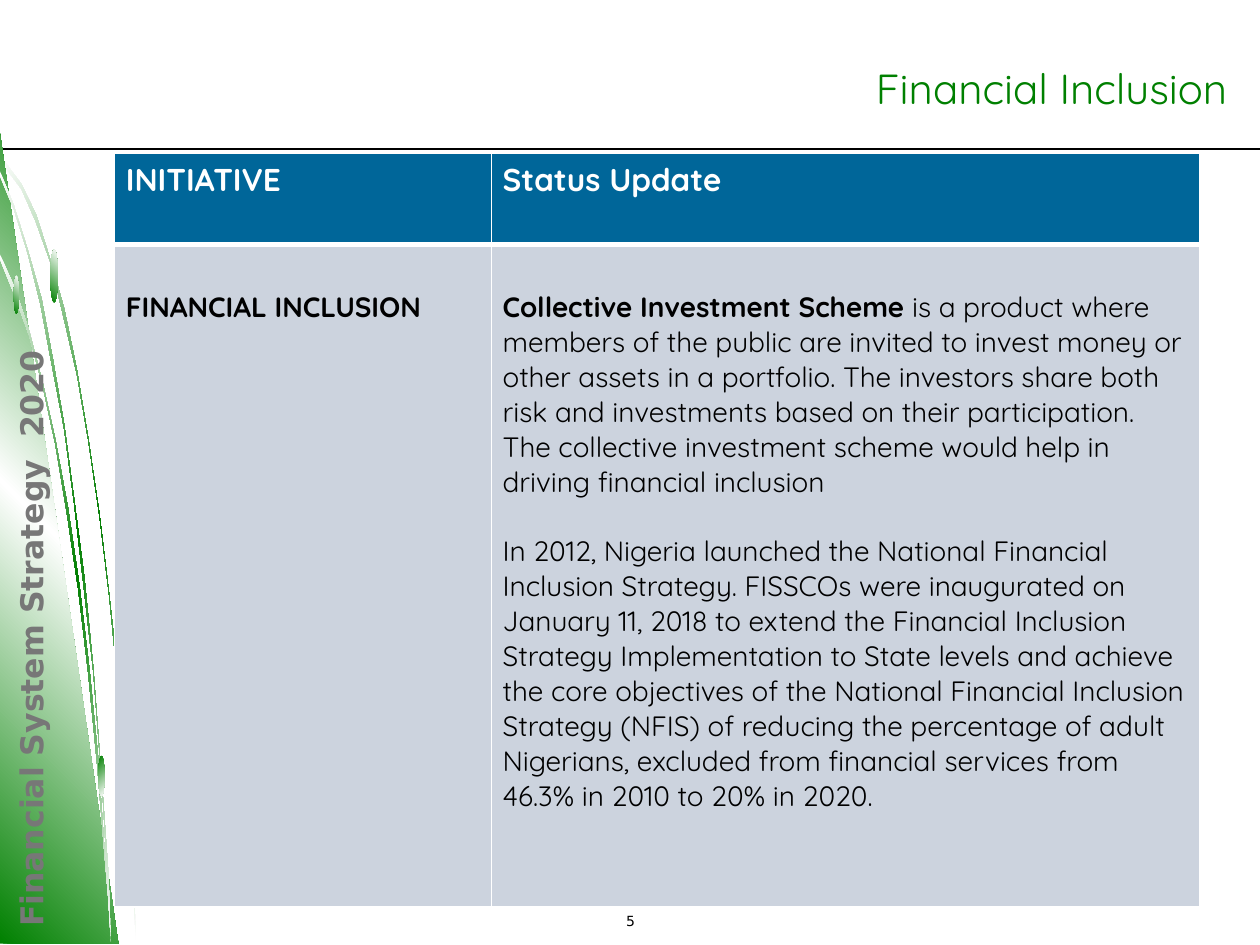
from copy import deepcopy

from lxml import etree
from pptx import Presentation
from pptx.dml.color import RGBColor
from pptx.enum.shapes import MSO_CONNECTOR, MSO_SHAPE
from pptx.enum.text import MSO_ANCHOR, PP_ALIGN
from pptx.oxml.ns import qn
from pptx.util import Inches, Pt

STRAIGHT = MSO_CONNECTOR.STRAIGHT
OVAL = MSO_SHAPE.OVAL
TOP, BOTTOM = MSO_ANCHOR.TOP, MSO_ANCHOR.BOTTOM
LEFT, CENTER, RIGHT = PP_ALIGN.LEFT, PP_ALIGN.CENTER, PP_ALIGN.RIGHT

HEADING_FONT, SIDE_FONT = "Quicksand", "DejaVu Sans"
BLACK, WHITE, GREEN, GRAY = "000000", "FFFFFF", "008000", "777777"
BLUE, PALE = "006699", "CCD3DE"
BLADE = (WHITE, GREEN, WHITE)

OUTER_BLADE = [
    (17, 146), (8, 134), (0, 123), (0, 127), (8, 138), (17, 150), (28, 175),
    (40, 208), (50, 250), (61, 297), (70, 349), (79, 410), (87, 476), (94, 549),
    (98, 596), (102, 646), (105, 696), (108, 748), (106, 696), (103, 646),
    (99, 596), (95, 547), (87, 474), (79, 408), (70, 347), (61, 293), (51, 245),
    (40, 206), (29, 171),
]
WEDGE = [(94, 749), (0, 749), (0, 106)]
LOWER_BLADE = [
    (83, 679), (86, 714), (88, 748), (86, 711), (83, 675), (78, 602), (71, 531),
    (63, 464), (54, 403), (44, 349), (34, 304), (23, 262), (12, 229), (0, 202),
    (0, 206), (11, 233), (23, 266), (34, 307), (44, 353), (53, 407), (62, 467),
    (70, 534), (77, 606),
]
UPPER_BLADE = [
    (0, 136), (0, 140), (11, 166), (22, 201), (32, 241), (41, 289), (51, 341),
    (59, 401), (66, 462), (74, 533), (78, 585), (82, 640), (85, 695), (88, 748),
    (86, 692), (82, 636), (78, 582), (74, 529), (67, 458), (59, 397), (51, 337),
    (42, 285), (33, 237), (22, 198), (11, 163),
]

SCHEME_TEXT = (
    " is a product where members of the public are invited to invest money or other "
    "assets in a portfolio. The investors share both risk and investments based on "
    "their participation. The collective investment scheme would help in driving "
    "financial inclusion"
)
STRATEGY_TEXT = (
    "In 2012, Nigeria launched the National Financial Inclusion Strategy. FISSCOs were "
    "inaugurated on January 11, 2018 to extend the Financial Inclusion Strategy "
    "Implementation to State levels and achieve the core objectives of the National "
    "Financial Inclusion Strategy (NFIS) of reducing the percentage of adult Nigerians, "
    "excluded from financial services from 46.3% in 2010 to 20% in 2020."
)


def color(value):
    return RGBColor.from_string(value)


def style_font(font, name, size, value, bold=False):
    font.name = name
    font.size = Pt(size)
    font.color.rgb = color(value)
    font.bold = bold


def apply_gradient(shape, colors, angle):
    shape.shadow.inherit = False
    shape.line.fill.background()
    shape.fill.gradient()
    shape.fill.gradient_angle = angle
    stop_list = shape._element.spPr.find(".//" + qn("a:gsLst"))
    while len(stop_list) < len(colors):
        stop_list.append(deepcopy(stop_list[-1]))
    for index, (stop, value) in enumerate(zip(shape.fill.gradient_stops, colors)):
        stop.position = index / (len(colors) - 1)
        stop.color.rgb = color(value)


def add_outline(slide, points, colors, angle):
    builder = slide.shapes.build_freeform(*points[0], scale=Inches(0.01))
    builder.add_line_segments(points[1:], close=True)
    apply_gradient(builder.convert_to_shape(), colors, angle)


def add_bud(slide, left, top, width, height, angle):
    shape = slide.shapes.add_shape(
        OVAL, Inches(left), Inches(top), Inches(width), Inches(height))
    apply_gradient(shape, (GREEN, WHITE), angle)


def add_rule(slide, top):
    line = slide.shapes.add_connector(
        STRAIGHT, Inches(0), Inches(top), Inches(10), Inches(top))
    line.line.color.rgb = color(BLACK)
    line.line.width = Pt(1)
    etree.SubElement(line._element.spPr, qn("a:effectLst"))


def add_text(slide, box, text, font, align=LEFT, anchor=TOP, margins=(0.1, 0.05, 0.1, 0.05)):
    shape = slide.shapes.add_textbox(*map(Inches, box))
    frame = shape.text_frame
    frame.word_wrap = True
    frame.vertical_anchor = anchor
    (frame.margin_left, frame.margin_top,
     frame.margin_right, frame.margin_bottom) = map(Inches, margins)
    frame.text = text
    paragraph = frame.paragraphs[0]
    paragraph.alignment = align
    style_font(paragraph.runs[0].font, *font)
    return shape


def set_borders(cell, widths):
    properties = cell._tc.get_or_add_tcPr()
    for index, (side, width) in enumerate(widths.items()):
        border = etree.Element(qn("a:" + side), w=str(Pt(width)))
        fill = etree.SubElement(border, qn("a:solidFill"))
        etree.SubElement(fill, qn("a:srgbClr"), val=WHITE)
        properties.insert(index, border)


def fill_cell(cell, paragraphs, fill, size, value, top_margin, widths):
    cell.fill.solid()
    cell.fill.fore_color.rgb = color(fill)
    set_borders(cell, widths)
    cell.margin_left = cell.margin_right = Inches(0.09)
    cell.margin_top, cell.margin_bottom = Inches(top_margin), Inches(0.05)
    frame = cell.text_frame
    for index, runs in enumerate(paragraphs):
        paragraph = frame.add_paragraph() if index else frame.paragraphs[0]
        if index:
            paragraph.space_before = Pt(20)
        for text, bold in runs:
            run = paragraph.add_run()
            run.text = text
            style_font(run.font, HEADING_FONT, size, value, bold)


def add_status_table(slide):
    widths, heights = (2.99, 5.62), (0.72, 5.26)
    table = slide.shapes.add_table(
        2, 2, Inches(0.91), Inches(1.22), Inches(sum(widths)), Inches(sum(heights))).table
    for column, width in zip(table.columns, widths):
        column.width = Inches(width)
    for row, height in zip(table.rows, heights):
        row.height = Inches(height)
    header_borders = {"lnL": 1, "lnR": 1, "lnT": 1, "lnB": 3}
    body_borders = {"lnL": 1, "lnR": 1, "lnT": 3, "lnB": 1}
    for index, heading in enumerate(("INITIATIVE", "Status Update")):
        fill_cell(table.cell(0, index), [[(heading, True)]],
                  BLUE, 18, WHITE, 0.05, header_borders)
    body = (
        [[("FINANCIAL INCLUSION", True)]],
        [[("Collective Investment Scheme", True), (SCHEME_TEXT, False)],
         [(STRATEGY_TEXT, False)]],
    )
    for index, paragraphs in enumerate(body):
        fill_cell(table.cell(1, index), paragraphs, PALE, 16, BLACK, 0.36, body_borders)


def add_foliage(slide):
    add_outline(slide, OUTER_BLADE, BLADE, 315)
    add_outline(slide, WEDGE, (GREEN, WHITE, GREEN), 45)
    add_outline(slide, LOWER_BLADE, BLADE, 315)
    add_outline(slide, UPPER_BLADE, BLADE, 315)
    add_bud(slide, 0.11, 2.19, 0.04, 0.3, 45)
    add_bud(slide, 0.78, 6, 0.05, 0.32, 315)
    add_bud(slide, 0.4, 1.98, 0.06, 0.42, 45)


def main():
    presentation = Presentation()
    presentation.slide_width, presentation.slide_height = Inches(10), Inches(7.5)
    slide = presentation.slides.add_slide(presentation.slide_layouts[6])
    add_rule(slide, 1.18)
    add_foliage(slide)
    side_title = add_text(slide, (-2.51, 4.5, 5.51, 0.4), "Financial System Strategy  2020",
                          (SIDE_FONT, 18, GRAY, True))
    side_title.rotation = 270
    add_text(slide, (1.81, 0.27, 7.93, 0.63), "Financial Inclusion",
             (HEADING_FONT, 24, GREEN), RIGHT, BOTTOM, (0, 0, 0, 0))
    add_status_table(slide)
    page_number = add_text(slide, (3.85, 6.98, 2.31, 0.52), "5", (SIDE_FONT, 8, BLACK),
                           CENTER, BOTTOM, (0.1, 0.05, 0.1, 0.13))
    page_number.text_frame.paragraphs[0].line_spacing = 0.7
    presentation.save("out.pptx")


if __name__ == "__main__":
    main()
